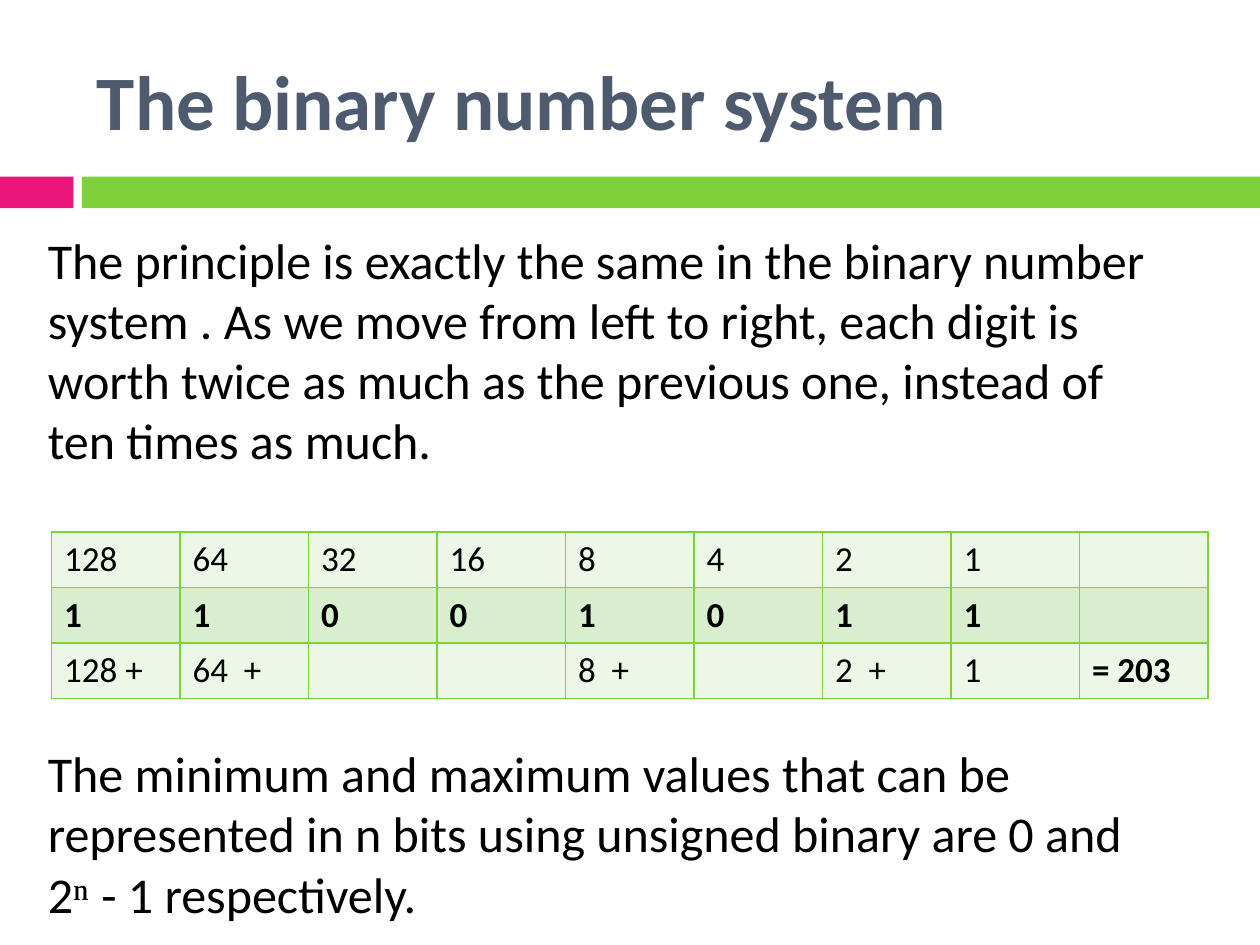
from lxml import etree
from pptx import Presentation
from pptx import util as u
from pptx.dml.color import RGBColor
from pptx.enum import shapes, text
from pptx.oxml.ns import qn

GREEN, PINK, SLATE, BLACK = "7FD13B", "EA157A", "4E5B6F", "000000"
PALE, TINT = "ECF7E8", "D8EECE"


def color(value):
    return RGBColor.from_string(value)


class SlideBuilder:
    """Holds the style and the current slide."""

    font = "Calibri"
    body_size = 28.6
    cell_size = 20

    def __init__(self, slide):
        self.slide = slide

    def place(self, shape, left, top, width, height):
        shape.left, shape.top = u.Cm(left), u.Cm(top)
        shape.width, shape.height = u.Cm(width), u.Cm(height)

    def format_run(self, run, size, fill=BLACK, bold=False, font=None):
        run.font.name = font or self.font
        run.font.size = u.Pt(size)
        run.font.bold = bold
        run.font.color.rgb = color(fill)

    def bar(self, left, top, width, height, fill):
        shape = self.slide.shapes.add_shape(
            shapes.MSO_SHAPE.RECTANGLE, u.Cm(left), u.Cm(top), u.Cm(width), u.Cm(height))
        shape.shadow.inherit = False
        shape.fill.solid()
        shape.fill.fore_color.rgb = color(fill)
        shape.line.fill.background()

    def title(self, wording, *box):
        shape = self.slide.shapes.title
        self.place(shape, *box)
        frame = shape.text_frame
        frame.text = wording
        frame.auto_size = text.MSO_AUTO_SIZE.NONE
        frame.vertical_anchor = text.MSO_ANCHOR.MIDDLE
        paragraph = frame.paragraphs[0]
        paragraph.alignment = text.PP_ALIGN.LEFT
        self.format_run(paragraph.runs[0], 44, SLATE, bold=True)

    def body(self, paragraphs, *box):
        """Each paragraph is (space before, [(wording, font), ...])."""
        shape = self.slide.placeholders[1]
        self.place(shape, *box)
        frame = shape.text_frame
        frame.auto_size = text.MSO_AUTO_SIZE.NONE
        frame.vertical_anchor = text.MSO_ANCHOR.TOP
        for index, (space, runs) in enumerate(paragraphs):
            paragraph = frame.add_paragraph() if index else frame.paragraphs[0]
            paragraph.space_before = u.Pt(space)
            properties = paragraph._p.get_or_add_pPr()
            properties.set("marL", "0")
            properties.set("indent", "0")
            etree.SubElement(properties, qn("a:buNone"))
            for wording, font in runs:
                run = paragraph.add_run()
                run.text = wording
                self.format_run(run, self.body_size, font=font)

    def borders(self, cell, line_color):
        properties = cell._tc.get_or_add_tcPr()
        for position, side in enumerate(("lnL", "lnR", "lnT", "lnB")):
            line = etree.Element(qn(f"a:{side}"), w=str(u.Pt(1)))
            fill = etree.SubElement(line, qn("a:solidFill"))
            etree.SubElement(fill, qn("a:srgbClr"), val=line_color)
            properties.insert(position, line)

    def table(self, rows, row_fills, bold_cells, *box):
        left, top, width, height = map(u.Cm, box)
        columns = len(rows[0])
        table = self.slide.shapes.add_table(
            len(rows), columns, left, top, width, height).table
        for row_index, row in enumerate(rows):
            for column_index, wording in enumerate(row):
                cell = table.cell(row_index, column_index)
                cell.fill.solid()
                cell.fill.fore_color.rgb = color(row_fills[row_index])
                self.borders(cell, GREEN)
                cell.text_frame.text = wording
                paragraph = cell.text_frame.paragraphs[0]
                paragraph.font.size = u.Pt(self.cell_size)
                for run in paragraph.runs:
                    self.format_run(run, self.cell_size,
                                    bold=(row_index, column_index) in bold_cells)


def main():
    presentation = Presentation()
    presentation.slide_width, presentation.slide_height = u.Cm(25.4), u.Cm(19.05)
    slide = presentation.slides.add_slide(presentation.slide_layouts[1])
    builder = SlideBuilder(slide)

    # Heading and the two-coloured band below it
    builder.bar(0, 3.56, 1.48, 0.64, PINK)
    builder.bar(1.65, 3.56, 23.75, 0.64, GREEN)
    builder.title("The binary number system", 1.7, 0.64, 22, 2.74)

    # Explanation, with a gap for the table between its paragraphs
    principle = ("The principle is exactly the same in the binary number system . "
                 "As we move from left to right, each digit is worth twice as much "
                 "as the previous one, instead of ten times as much.")
    limits = ("The minimum and maximum values that can be represented in n bits "
              "using unsigned binary are 0 and 2")
    builder.body([
        (7, [(principle, None)]),
        (156, [(limits, None), ("ⁿ ", "Times New Roman"), ("- 1 respectively.", None)]),
    ], 0.71, 4.5, 23.05, 4.88)

    # Place values, binary digits and their sum
    digits = "11001011"
    place_values = [str(2 ** power) for power in reversed(range(len(digits)))]
    rows = [
        place_values + [""],
        list(digits) + [""],
        ["128 +", "64  +", "", "", "8  +", "", "2  +", "1", "= 203"],
    ]
    bold_cells = {(1, column) for column in range(len(digits))} | {(2, len(digits))}
    builder.table(rows, [PALE, TINT, PALE], bold_cells, 1.04, 10.72, 23.31, 3.36)

    presentation.save("out.pptx")


if __name__ == "__main__":
    main()
